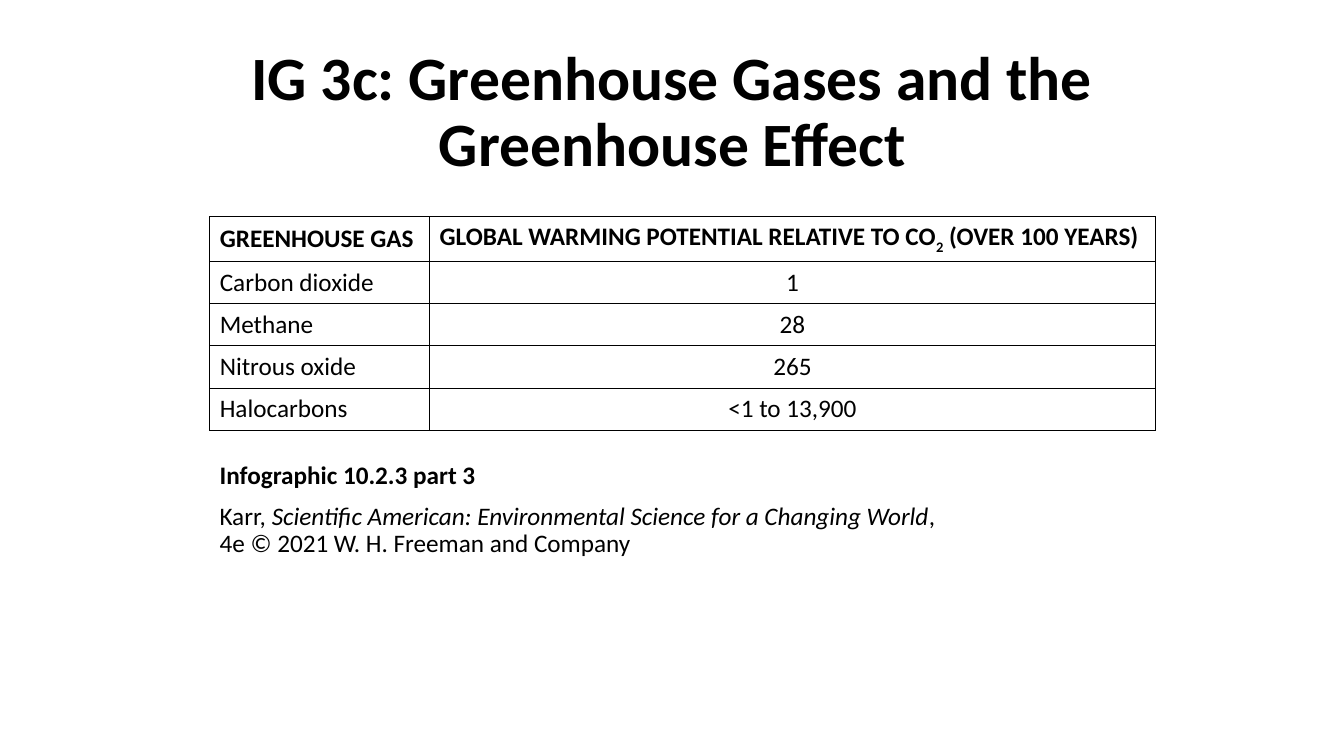
from lxml.etree import SubElement
from pptx import Presentation
from pptx.dml.color import RGBColor
from pptx.enum.text import MSO_ANCHOR as Anchor, PP_ALIGN as Align
from pptx.oxml.ns import qn
from pptx.util import Inches, Pt

FONT = "Calibri"
BLACK = "000000"
GASES = [
    ("Carbon dioxide", "1"),
    ("Methane", "28"),
    ("Nitrous oxide", "265"),
    ("Halocarbons", "<1 to 13,900"),
]
COLUMN_WIDTHS = (2.18, 7.2)
HEADER_HEIGHT, ROW_HEIGHT = 0.44, 0.42


def color(hex_string):
    return RGBColor.from_string(hex_string)


def add_run(paragraph, text, size=18, bold=False, italic=False):
    run = paragraph.add_run()
    run.text = text
    font = run.font
    font.name, font.size = FONT, Pt(size)
    font.bold, font.italic = bold, italic
    font.color.rgb = color(BLACK)
    return run


def add_text_box(slide, left, top, width, height, anchor):
    box = slide.shapes.add_textbox(
        Inches(left), Inches(top), Inches(width), Inches(height))
    frame = box.text_frame
    frame.word_wrap = True
    frame.vertical_anchor = anchor
    return frame


def add_title(slide, text):
    frame = add_text_box(slide, 0.92, 0.4, 11.5, 1.45, Anchor.MIDDLE)
    paragraph = frame.paragraphs[0]
    paragraph.alignment = Align.CENTER
    paragraph.line_spacing = 0.9
    add_run(paragraph, text, size=44, bold=True)


def add_source_note(slide):
    frame = add_text_box(slide, 2.08, 4.54, 7.4, 1.13, Anchor.TOP)
    heading, citation = frame.paragraphs[0], frame.add_paragraph()
    heading.line_spacing = citation.line_spacing = 0.9
    citation.space_before = Pt(10)
    add_run(heading, "Infographic 10.2.3 part 3", bold=True)
    add_run(citation, "Karr, ")
    add_run(citation,
            "Scientific American: Environmental Science for a Changing World",
            italic=True)
    add_run(citation, ", 4e © 2021 W. H. Freeman and Company")


def style_cell(cell):
    """Give the cell thin black borders, no fill and centred height."""
    properties = cell._tc.get_or_add_tcPr()
    for side in ("lnL", "lnR", "lnT", "lnB"):
        line = SubElement(properties, qn(f"a:{side}"), w=str(Pt(1)))
        fill = SubElement(line, qn("a:solidFill"))
        SubElement(fill, qn("a:srgbClr"), val=BLACK)
    cell.fill.background()
    cell.vertical_anchor = Anchor.MIDDLE


def add_gas_table(slide):
    row_count = len(GASES) + 1
    height = HEADER_HEIGHT + ROW_HEIGHT * len(GASES)
    table = slide.shapes.add_table(
        row_count, len(COLUMN_WIDTHS), Inches(2.08), Inches(2.15),
        Inches(sum(COLUMN_WIDTHS)), Inches(height)).table
    table.first_row = table.horz_banding = False
    for column, width in zip(table.columns, COLUMN_WIDTHS):
        column.width = Inches(width)
    for index, row in enumerate(table.rows):
        row.height = Inches(ROW_HEIGHT if index else HEADER_HEIGHT)
    for cell in table.iter_cells():
        style_cell(cell)

    gas_header, potential_header = (
        cell.text_frame.paragraphs[0] for cell in table.rows[0].cells)
    add_run(gas_header, "GREENHOUSE GAS", bold=True)
    add_run(potential_header, "GLOBAL WARMING POTENTIAL RELATIVE TO CO", bold=True)
    subscript = add_run(potential_header, "2", bold=True)
    subscript.font._element.set("baseline", "-25000")
    add_run(potential_header, " (OVER 100 YEARS)", bold=True)

    for row, (gas, potential) in enumerate(GASES, start=1):
        add_run(table.cell(row, 0).text_frame.paragraphs[0], gas)
        paragraph = table.cell(row, 1).text_frame.paragraphs[0]
        paragraph.alignment = Align.CENTER
        add_run(paragraph, potential)


def main():
    presentation = Presentation()
    presentation.slide_width = Inches(13.33)
    presentation.slide_height = Inches(7.5)
    slide = presentation.slides.add_slide(presentation.slide_layouts[6])
    add_title(slide, "IG 3c: Greenhouse Gases and the Greenhouse Effect")
    add_source_note(slide)
    add_gas_table(slide)
    presentation.save("out.pptx")


if __name__ == "__main__":
    main()
